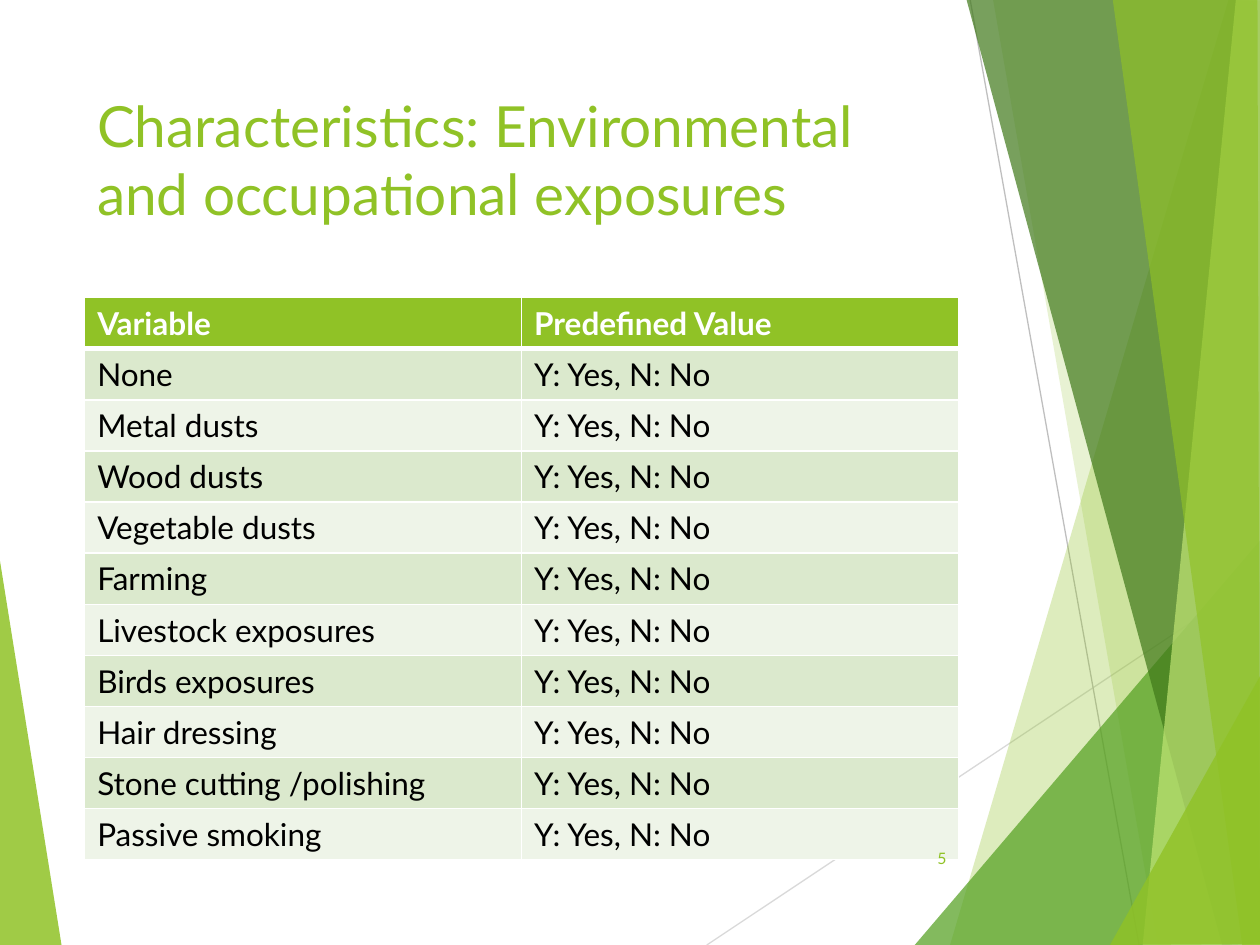
from lxml import etree
from pptx import Presentation
from pptx.dml.color import RGBColor
from pptx.enum.shapes import MSO_CONNECTOR
from pptx.enum.text import MSO_ANCHOR, PP_ALIGN
from pptx.oxml.ns import qn
from pptx.util import Pt

STRAIGHT = MSO_CONNECTOR.STRAIGHT
TOP, MIDDLE = MSO_ANCHOR.TOP, MSO_ANCHOR.MIDDLE
LEFT, RIGHT = PP_ALIGN.LEFT, PP_ALIGN.RIGHT

FONT = "Lato"
LIME = RGBColor(0x90, 0xC2, 0x26)
GREEN = RGBColor(0x54, 0xA0, 0x21)
DARK_GREEN = RGBColor(0x3F, 0x78, 0x19)
PALE_LIME = RGBColor(0xC0, 0xE4, 0x74)
BAND_DARK = RGBColor(0xDB, 0xE9, 0xCD)
BAND_LIGHT = RGBColor(0xEE, 0xF4, 0xE8)
LIGHT_GREY = RGBColor(0xD9, 0xD9, 0xD9)
MID_GREY = RGBColor(0xBF, 0xBF, 0xBF)
WHITE = RGBColor(0xFF, 0xFF, 0xFF)
BLACK = RGBColor(0, 0, 0)

WIDTH, HEIGHT = 720, 540
EDGE = 720.7  # facets reach slightly past the right edge

TITLE = "Characteristics: Environmental and occupational exposures"
PAGE_NUMBER = "5"
HEADERS = ("Variable", "Predefined Value")
ANSWER = "Y: Yes, N: No"
EXPOSURES = [
    "None", "Metal dusts", "Wood dusts", "Vegetable dusts", "Farming",
    "Livestock exposures", "Birds exposures", "Hair dressing",
    "Stone cutting /polishing", "Passive smoking",
]

# Colour, opacity in percent, corner points
LEFT_FACET = (LIME, 85, [(-0.7, 316), (35.3, 540.7), (-0.7, 540)])
RIGHT_FACETS = [
    (LIME, 30, [(702, 0), (542.9, 540), (721.4, 540.7), (EDGE, 0.7)]),
    (LIME, 20, [(567.4, -0.7), (661.7, 540), (EDGE, 540), (EDGE, -0.7)]),
    (GREEN, 72, [(522.7, 540), (720, 308.9), (EDGE, 540)]),
    (DARK_GREEN, 70, [(552.2, -0.7), (698.4, 540), (EDGE, 539.3), (EDGE, -0.7)]),
    (PALE_LIME, 70, [(706.3, -0.7), (653, 540), (EDGE, 540), (720, -0.7)]),
    (LIME, 65, [(635.8, -0.7), (709.9, 540), (720, 540), (718.6, -0.7)]),
    (LIME, 80, [(634.3, 540), (EDGE, 385.2), (EDGE, 539.3)]),
]
# Colour, start, end
HAIRLINES = [
    (LIGHT_GREY, (403.9, 540), (EDGE, 329)),
    (MID_GREY, (554.4, 0), (650.9, 540)),
]

MARGIN, CONTENT_WIDTH = 48.4, 499.4
TITLE_BOX = (MARGIN, 48.2, CONTENT_WIDTH, 103.7)
NUMBER_BOX = (507.6, 475.9, 40.3, 28.8)
TABLE_TOP, ROW_HEIGHT = 170.1, 29.2


def add_facet(page, color, opacity, corners):
    builder = page.shapes.build_freeform(
        Pt(corners[0][0]), Pt(corners[0][1]), scale=1.0)
    builder.add_line_segments([(Pt(x), Pt(y)) for x, y in corners[1:]], close=True)
    facet = builder.convert_to_shape()
    facet.shadow.inherit = False
    facet.line.fill.background()
    facet.fill.solid()
    facet.fill.fore_color.rgb = color
    tint = facet.fill._xPr.find(qn("a:solidFill"))[0]
    etree.SubElement(tint, qn("a:alpha"), val=str(opacity * 1000))


def add_hairline(page, color, start, end):
    line = page.shapes.add_connector(STRAIGHT, *map(Pt, start + end))
    line.line.color.rgb = color
    line.line.width = Pt(0.75)
    etree.SubElement(line._element.spPr, qn("a:effectLst"))


def style_text(paragraph, size, color, bold=False, align=LEFT):
    paragraph.alignment = align
    for span in paragraph.runs:
        span.font.name = FONT
        span.font.size = Pt(size)
        span.font.bold = bold
        span.font.color.rgb = color


def add_text(page, bounds, text, size, anchor, align):
    box = page.shapes.add_textbox(*map(Pt, bounds))
    frame = box.text_frame
    frame.word_wrap = True
    frame.vertical_anchor = anchor
    frame.text = text
    style_text(frame.paragraphs[0], size, LIME, align=align)


def set_borders(cell, top, bottom):
    """Draw white borders: 1 pt at the sides, the given points above and below."""
    properties = cell._tc.get_or_add_tcPr()
    for side, width in (("L", 1), ("R", 1), ("T", top), ("B", bottom)):
        border = etree.SubElement(properties, qn(f"a:ln{side}"), w=str(Pt(width)))
        fill = etree.SubElement(border, qn("a:solidFill"))
        etree.SubElement(fill, qn("a:srgbClr"), val=str(WHITE))


def add_exposure_table(page):
    rows = [HEADERS] + [(exposure, ANSWER) for exposure in EXPOSURES]
    table = page.shapes.add_table(
        len(rows), len(HEADERS), Pt(MARGIN), Pt(TABLE_TOP),
        Pt(CONTENT_WIDTH), Pt(ROW_HEIGHT * len(rows))).table
    for index, values in enumerate(rows):
        table.rows[index].height = Pt(ROW_HEIGHT)
        header = index == 0
        band = LIME if header else BAND_DARK if index % 2 else BAND_LIGHT
        for column, value in enumerate(values):
            cell = table.cell(index, column)
            set_borders(cell, 3 if index == 1 else 1, 3 if header else 1)
            cell.fill.solid()
            cell.fill.fore_color.rgb = band
            cell.vertical_anchor = TOP if header else MIDDLE
            cell.text_frame.text = value
            style_text(cell.text_frame.paragraphs[0], 18,
                       WHITE if header else BLACK, bold=header)


def main():
    deck = Presentation()
    deck.slide_width, deck.slide_height = Pt(WIDTH), Pt(HEIGHT)
    page = deck.slides.add_slide(deck.slide_layouts[6])
    add_facet(page, *LEFT_FACET)
    for hairline in HAIRLINES:
        add_hairline(page, *hairline)
    for facet in RIGHT_FACETS:
        add_facet(page, *facet)
    add_text(page, TITLE_BOX, TITLE, 32.4, TOP, LEFT)
    add_exposure_table(page)
    add_text(page, NUMBER_BOX, PAGE_NUMBER, 9, MIDDLE, RIGHT)
    deck.save("out.pptx")


if __name__ == "__main__":
    main()
